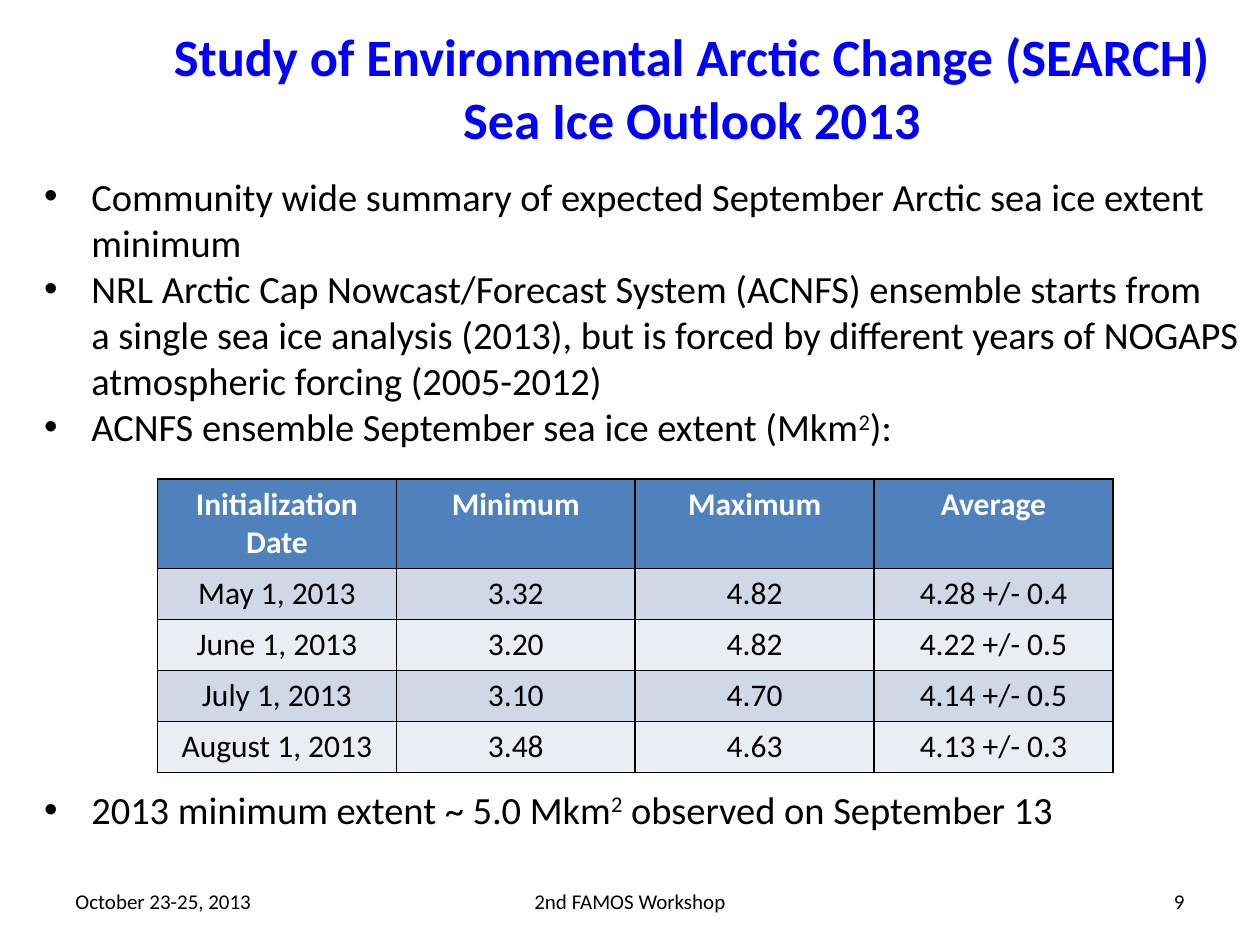
from lxml.etree import SubElement
from pptx import Presentation
from pptx.dml.color import RGBColor
from pptx.enum.text import MSO_ANCHOR, MSO_AUTO_SIZE, PP_ALIGN
from pptx.oxml.ns import qn
from pptx.util import Pt

# Content: "\v" breaks a line, "^" surrounds superscript text
TITLE = ["Study of Environmental Arctic Change (SEARCH)", "Sea Ice Outlook 2013"]
BULLETS = [
    "Community wide summary of expected September Arctic sea ice extent\vminimum",
    "NRL Arctic Cap Nowcast/Forecast System (ACNFS) ensemble starts from\v"
    "a single sea ice analysis (2013), but is forced by different years of NOGAPS\v"
    "atmospheric forcing (2005-2012)",
    "ACNFS ensemble September sea ice extent (Mkm^2^):",
    "2013 minimum extent ~ 5.0 Mkm^2^ observed on September 13",
]
ICE_EXTENT = [
    ("Initialization Date", "Minimum", "Maximum", "Average"),
    ("May 1, 2013", "3.32", "4.82", "4.28 +/- 0.4"),
    ("June 1, 2013", "3.20", "4.82", "4.22 +/- 0.5"),
    ("July 1, 2013", "3.10", "4.70", "4.14 +/- 0.5"),
    ("August 1, 2013", "3.48", "4.63", "4.13 +/- 0.3"),
]
FOOTERS = [  # text, left, width, alignment
    ("October 23-25, 2013", 36, 168, PP_ALIGN.LEFT),
    ("2nd FAMOS Workshop", 246, 228, PP_ALIGN.CENTER),
    ("9", 516, 168, PP_ALIGN.RIGHT),
]

BLACK = RGBColor(0x00, 0x00, 0x00)
WHITE = RGBColor(0xFF, 0xFF, 0xFF)
TITLE_BLUE = RGBColor(0x00, 0x00, 0xFF)
HEADER_BLUE = RGBColor(0x4F, 0x81, 0xBD)
BANDS = [RGBColor(0xE9, 0xED, 0xF4), RGBColor(0xD0, 0xD8, 0xE8)]

HANGING = Pt(27)
TABLE_GAP = Pt(192)  # room for the table above the last bullet
HEADER_HEIGHT, ROW_HEIGHT = Pt(50.4), Pt(29.2)


def style(para, size, color=BLACK, bold=False, align=PP_ALIGN.LEFT):
    para.alignment = align
    para.font.name = "Calibri"
    para.font.size = Pt(size)
    para.font.bold = bold
    para.font.color.rgb = color


def place(box, left, top, width, height, anchor=MSO_ANCHOR.TOP):
    box.left, box.top, box.width, box.height = Pt(left), Pt(top), Pt(width), Pt(height)
    frame = box.text_frame
    frame.word_wrap = True
    frame.auto_size = MSO_AUTO_SIZE.NONE
    frame.vertical_anchor = anchor
    return frame


def add_spans(para, text):
    for index, part in enumerate(text.split("^")):
        for number, line in enumerate(part.split("\v")):
            if number:
                para.add_line_break()
            span = para.add_run()
            span.text = line
            if index % 2:
                span.font._element.set("baseline", "30000")


def add_borders(cell):
    properties = cell._tc.get_or_add_tcPr()
    for position, side in enumerate(("lnL", "lnR", "lnT", "lnB")):
        line = properties.makeelement(qn(f"a:{side}"), {"w": str(Pt(1))})
        fill = SubElement(line, qn("a:solidFill"))
        SubElement(fill, qn("a:srgbClr"), val=str(BLACK))
        properties.insert(position, line)


deck = Presentation()
deck.slide_width, deck.slide_height = Pt(720), Pt(540)
page = deck.slides.add_slide(deck.slide_layouts[1])

# Title
frame = place(page.shapes.title, 89, 10, 613, 80)
frame.text = "\n".join(TITLE)
for para in frame.paragraphs:
    style(para, 30, TITLE_BLUE, True, PP_ALIGN.CENTER)

# Bullets above and below the table
frame = place(page.placeholders[1], 18, 95, 702, 400)
frame.margin_right = 0
for index, text in enumerate(BULLETS):
    para = frame.paragraphs[0] if index == 0 else frame.add_paragraph()
    add_spans(para, text)
    properties = para._p.get_or_add_pPr()
    properties.set("marL", str(HANGING))
    properties.set("indent", str(-HANGING))
    para.space_before = TABLE_GAP if index == len(BULLETS) - 1 else Pt(0)
    style(para, 22)

# Table of ensemble results
rows, columns = len(ICE_EXTENT), len(ICE_EXTENT[0])
height = HEADER_HEIGHT + (rows - 1) * ROW_HEIGHT
table = page.shapes.add_table(rows, columns, Pt(90), Pt(273.6), Pt(546), height).table
for row, values in enumerate(ICE_EXTENT):
    header = row == 0
    table.rows[row].height = HEADER_HEIGHT if header else ROW_HEIGHT
    for column, value in enumerate(values):
        cell = table.cell(row, column)
        cell.text = value
        cell.fill.solid()
        cell.fill.fore_color.rgb = HEADER_BLUE if header else BANDS[row % 2]
        add_borders(cell)
        style(cell.text_frame.paragraphs[0], 18, WHITE if header else BLACK,
              header, PP_ALIGN.CENTER)

# Footer line
for text, left, width, align in FOOTERS:
    box = page.shapes.add_textbox(0, 0, 0, 0)
    frame = place(box, left, 500.5, width, 28.75, MSO_ANCHOR.MIDDLE)
    frame.text = text
    style(frame.paragraphs[0], 12, align=align)

deck.save("out.pptx")
